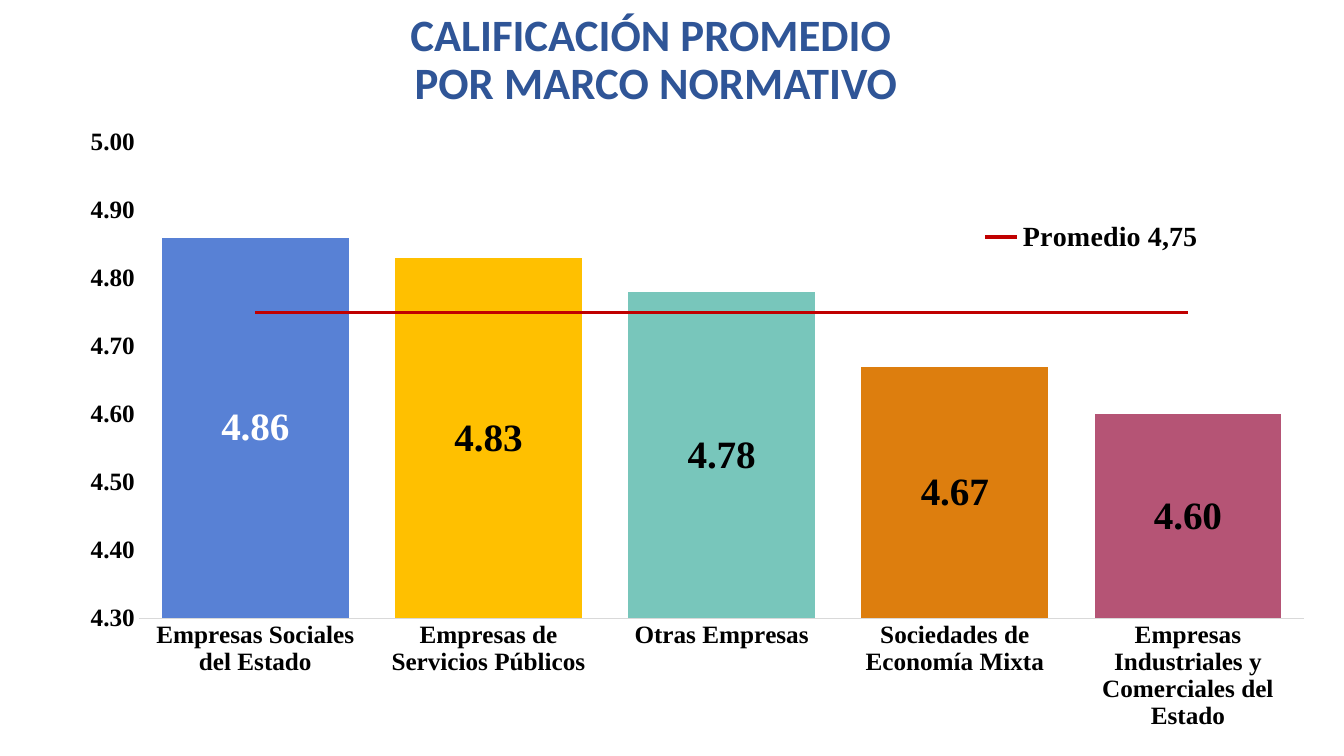
from pptx import Presentation
from pptx import util as u
from pptx.chart import data
from pptx.dml.color import RGBColor
from pptx.enum import chart as ch, text
from pptx.oxml import ns, parse_xml

EMU_PER_PX = 914400 / 100.8
BLACK = RGBColor(0x00, 0x00, 0x00)
WHITE = RGBColor(0xFF, 0xFF, 0xFF)
NAVY = RGBColor(0x2F, 0x55, 0x97)
RED = RGBColor(0xC0, 0x00, 0x00)
PALE_GRAY = RGBColor(0xD9, 0xD9, 0xD9)
BLUE = RGBColor(0x58, 0x81, 0xD5)
GOLD = RGBColor(0xFF, 0xC0, 0x00)
TEAL = RGBColor(0x78, 0xC6, 0xBB)
ORANGE = RGBColor(0xDD, 0x7E, 0x0E)
ROSE = RGBColor(0xB5, 0x54, 0x75)

SCORES = [
    ("Empresas Sociales del Estado", 4.86, BLUE),
    ("Empresas de Servicios Públicos", 4.83, GOLD),
    ("Otras Empresas", 4.78, TEAL),
    ("Sociedades de Economía Mixta", 4.67, ORANGE),
    ("Empresas Industriales y Comerciales del Estado", 4.60, ROSE),
]
AVERAGE = 4.75


def px(*lengths):
    return [u.Emu(round(length * EMU_PER_PX)) for length in lengths]


def apply(target, values):
    for name, value in values.items():
        setattr(target, name, value)


def style_font(font, size, color=BLACK, name="Times New Roman"):
    apply(font, {"size": u.Pt(size), "bold": True, "name": name})
    font.color.rgb = color


def chart_xml(markup):
    """Parse one chart element, declaring its namespace."""
    tag, rest = markup.split(">", 1)
    return parse_xml(f"{tag} {ns.nsdecls('c')}>{rest}")


def manual_layout(x, y, w, h, inner=False):
    target = '<c:layoutTarget val="inner"/>' if inner else ""
    modes = '<c:xMode val="edge"/><c:yMode val="edge"/>'
    sizes = "".join(f'<c:{key} val="{value}"/>'
                    for key, value in zip("xywh", (x, y, w, h)))
    return chart_xml(f"<c:layout><c:manualLayout>{target}{modes}{sizes}"
                     "</c:manualLayout></c:layout>")


def drop_children(parent, tag):
    for child in parent.findall(ns.qn(tag)):
        parent.remove(child)


def add_title(page, words):
    box = page.shapes.add_textbox(*px(-16, 31, 1344, 60))
    frame = box.text_frame
    apply(frame, {"word_wrap": True, "vertical_anchor": text.MSO_ANCHOR.MIDDLE})
    para = frame.paragraphs[0]
    para.text = words
    apply(para, {"alignment": text.PP_ALIGN.CENTER, "line_spacing": 0.9})
    for span in para.runs:
        style_font(span.font, 32, NAVY, "Calibri")


def move_average_to_line(chart):
    """Turn the second column series into a line on the same axes."""
    bars = chart.plots[0]._element
    average = bars.findall(ns.qn("c:ser"))[1]
    drop_children(average, "c:invertIfNegative")
    line_plot = chart_xml('<c:lineChart><c:grouping val="standard"/>'
                          '<c:varyColors val="0"/><c:marker val="1"/></c:lineChart>')
    line_plot.insert(2, average)
    for axis in bars.findall(ns.qn("c:axId")):
        line_plot.append(chart_xml(f'<c:axId val="{axis.get("val")}"></c:axId>'))
    bars.addnext(line_plot)
    series = chart.plots[1].series[0]
    series.smooth = False
    series.marker.style = ch.XL_MARKER_STYLE.NONE
    series.format.line.width = u.Pt(2.25)
    series.format.line.color.rgb = RED


def style_columns(plot):
    apply(plot, {"gap_width": 25, "overlap": 0, "vary_by_categories": False})
    series = plot.series[0]
    series.invert_if_negative = False
    labels = series.data_labels
    apply(labels, {"show_value": True, "number_format": "0.00",
                   "number_format_is_linked": False,
                   "position": ch.XL_LABEL_POSITION.CENTER})
    style_font(labels.font, 28)
    for index, (_, _, color) in enumerate(SCORES):
        fill = series.points[index].format.fill
        fill.solid()
        fill.fore_color.rgb = color
    first_label = series.points[0].data_label
    style_font(first_label.font, 28, WHITE)
    first_label.position = ch.XL_LABEL_POSITION.CENTER


def style_axes(chart):
    for axis in (chart.category_axis, chart.value_axis):
        apply(axis, {"major_tick_mark": ch.XL_TICK_MARK.NONE,
                     "minor_tick_mark": ch.XL_TICK_MARK.NONE,
                     "has_major_gridlines": False})
        style_font(axis.tick_labels.font, 18)
    baseline = chart.category_axis.format.line
    baseline.width = u.Pt(0.75)
    baseline.color.rgb = PALE_GRAY
    values = chart.value_axis
    apply(values, {"minimum_scale": 4.3, "maximum_scale": 5, "major_unit": 0.1})
    apply(values.tick_labels, {"number_format": "0.00",
                               "number_format_is_linked": False})
    values.format.line.fill.background()


def add_legend(chart):
    """Show only the average in the legend, above the lower columns."""
    chart.has_legend = True
    legend = chart.legend
    apply(legend, {"position": ch.XL_LEGEND_POSITION.BOTTOM,
                   "include_in_layout": False})
    style_font(legend.font, 20)
    drop_children(legend._element, "c:layout")
    place = legend._element.find(ns.qn("c:legendPos"))
    place.addnext(manual_layout(0.74, 0.17, 0.18, 0.07))
    place.addnext(chart_xml('<c:legendEntry><c:idx val="0"/>'
                            '<c:delete val="1"/></c:legendEntry>'))


def add_score_chart(page):
    names, scores, _ = zip(*SCORES)
    chart_data = data.CategoryChartData(number_format="0.00")
    chart_data.categories = names
    chart_data.add_series("Series 1", scores)
    chart_data.add_series("Promedio 4,75", [AVERAGE] * len(SCORES))
    chart = page.shapes.add_chart(ch.XL_CHART_TYPE.COLUMN_CLUSTERED,
                                  *px(51, 112, 1254, 618), chart_data).chart
    chart.has_title = False
    apply(chart.font, {"size": u.Pt(12), "name": "Times New Roman"})
    move_average_to_line(chart)
    style_columns(chart.plots[0])
    style_axes(chart)
    add_legend(chart)
    plot_area = chart.plots[0]._element.getparent()
    drop_children(plot_area, "c:layout")
    plot_area.insert(0, manual_layout(0.07, 0.05, 0.93, 0.78, inner=True))


def main():
    deck = Presentation()
    deck.slide_width, deck.slide_height = px(1344, 756)
    page = deck.slides.add_slide(deck.slide_layouts[6])
    add_title(page, "CALIFICACIÓN PROMEDIO \vPOR MARCO NORMATIVO")
    add_score_chart(page)
    deck.save("out.pptx")


if __name__ == "__main__":
    main()
